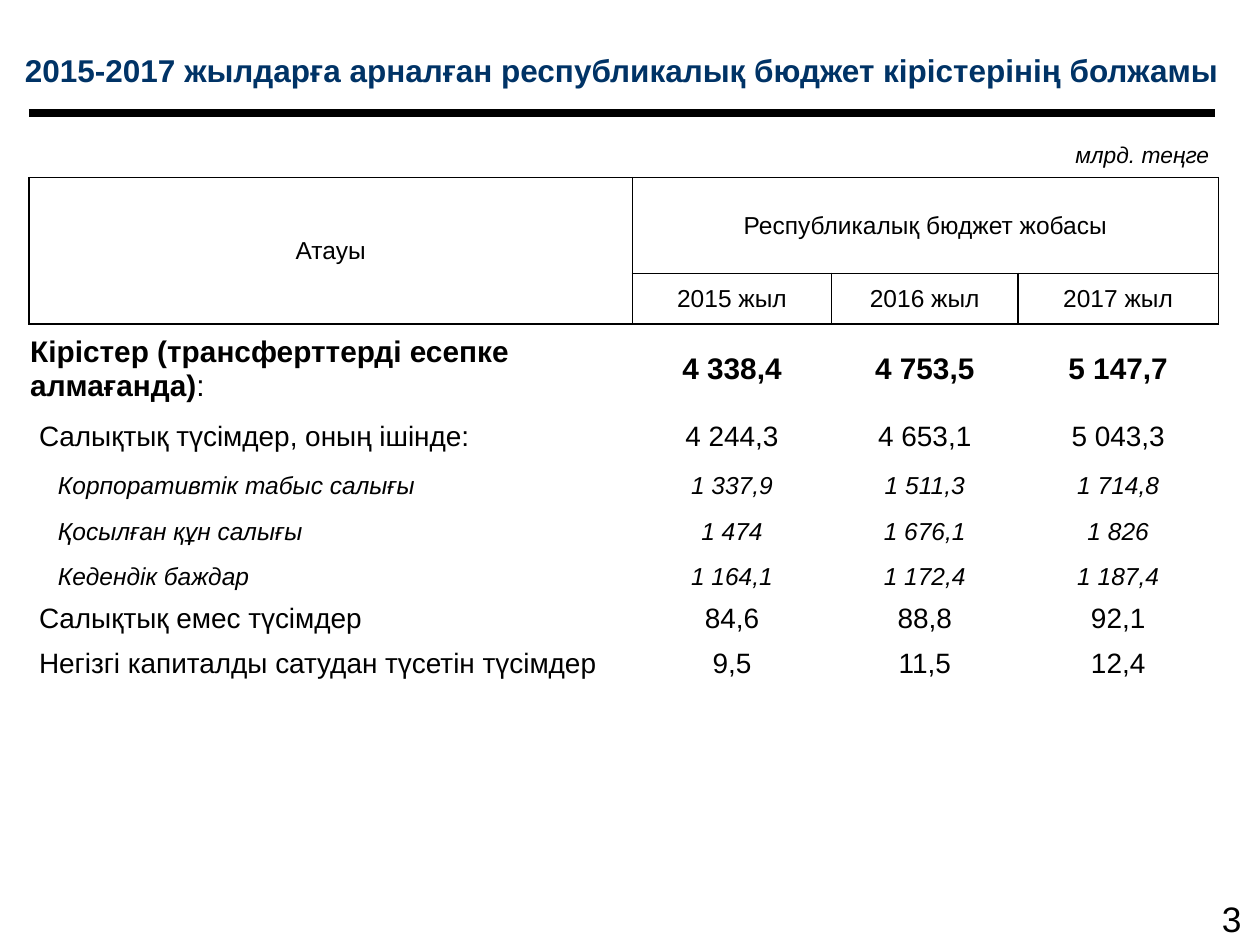
from dataclasses import dataclass

from lxml import etree
from pptx import Presentation
from pptx.dml.color import RGBColor
from pptx.enum import shapes, text
from pptx.oxml import ns
from pptx.util import Inches, Pt

COLORS = {"title": "003366", "ink": "000000"}
FONT = "Arial"
CENTER, LEFT = text.PP_ALIGN.CENTER, text.PP_ALIGN.LEFT
COL_WIDTHS = (4.79, 1.58, 1.48, 1.59)
HEADER_HEIGHTS = (0.76, 0.4)
YEARS = ("2015 жыл", "2016 жыл", "2017 жыл")


@dataclass
class Level:
    size: float
    indent: float
    bold: bool = False
    italic: bool = False


@dataclass
class BudgetRow:
    label: str
    values: tuple[str, str, str]
    height: float
    level: Level
    suffix: str = ""


HEADER = Level(14, 0.01)
TOTAL = Level(17, 0.01, bold=True)
GROUP = Level(16, 0.08)
DETAIL = Level(14, 0.23, italic=True)

ROWS = (
    BudgetRow("Кірістер (трансферттерді есепке алмағанда)",
              ("4 338,4", "4 753,5", "5 147,7"), 0.71, TOTAL, ":"),
    BudgetRow("Салықтық түсімдер, оның ішінде:",
              ("4 244,3", "4 653,1", "5 043,3"), 0.37, GROUP),
    BudgetRow("Корпоративтік табыс салығы",
              ("1 337,9", "1 511,3", "1 714,8"), 0.41, DETAIL),
    BudgetRow("Қосылған құн салығы", ("1 474", "1 676,1", "1 826"), 0.32, DETAIL),
    BudgetRow("Кедендік баждар", ("1 164,1", "1 172,4", "1 187,4"), 0.39, DETAIL),
    BudgetRow("Салықтық емес түсімдер", ("84,6", "88,8", "92,1"), 0.28, GROUP),
    BudgetRow("Негізгі капиталды сатудан түсетін түсімдер",
              ("9,5", "11,5", "12,4"), 0.43, GROUP),
)


def add_text(tf, content: str, *, size: float, color: str = "ink",
             bold: bool = False, italic: bool = False, align=LEFT) -> None:
    """Append a formatted run to the first paragraph of a text frame."""
    p = tf.paragraphs[0]
    p.alignment = align
    r = p.add_run()
    r.text = content
    r.font.name = FONT
    r.font.size = Pt(size)
    r.font.bold = bold
    r.font.italic = italic
    r.font.color.rgb = RGBColor.from_string(COLORS[color])


def add_box(s, content: str, left: float, top: float, width: float, height: float,
            *, anchor=text.MSO_ANCHOR.TOP, **fmt) -> None:
    sp = s.shapes.add_textbox(Inches(left), Inches(top), Inches(width), Inches(height))
    tf = sp.text_frame
    tf.word_wrap = True
    tf.vertical_anchor = anchor
    add_text(tf, content, **fmt)


def add_rule(s, left: float, right: float, y: float, weight: float) -> None:
    line = s.shapes.add_connector(shapes.MSO_CONNECTOR.STRAIGHT, Inches(left),
                                  Inches(y), Inches(right), Inches(y))
    line.line.width = Pt(weight)
    line.line.color.rgb = RGBColor.from_string(COLORS["ink"])
    etree.SubElement(line._element.spPr, ns.qn("a:effectLst"))


def set_borders(cell, sides: str) -> None:
    """Draw the named sides (any of L, R, T, B) and clear the others."""
    tc_pr = cell._tc.get_or_add_tcPr()
    for side in "LRTB":
        ln = etree.SubElement(tc_pr, ns.qn(f"a:ln{side}"), w=str(Pt(1)))
        if side in sides:
            fill = etree.SubElement(ln, ns.qn("a:solidFill"))
            etree.SubElement(fill, ns.qn("a:srgbClr"), val=COLORS["ink"])
        else:
            etree.SubElement(ln, ns.qn("a:noFill"))


def style_cell(cell, sides: str, indent: float = 0.01) -> None:
    cell.margin_left = Inches(indent)
    cell.margin_right = cell.margin_top = Inches(0.01)
    cell.margin_bottom = 0
    cell.vertical_anchor = text.MSO_ANCHOR.MIDDLE
    set_borders(cell, sides)
    cell.fill.background()


def fill_header(table) -> None:
    for row in range(len(HEADER_HEIGHTS)):
        for col in range(len(COL_WIDTHS)):
            style_cell(table.cell(row, col), "LRTB")
    table.cell(0, 0).merge(table.cell(1, 0))
    table.cell(0, 1).merge(table.cell(0, 3))
    labels = {(0, 0): "\u00a0Атауы".strip(), (0, 1): "Республикалық бюджет жобасы"}
    labels |= {(1, col): year for col, year in enumerate(YEARS, 1)}
    for (row, col), label in labels.items():
        add_text(table.cell(row, col).text_frame, label, size=HEADER.size, align=CENTER)


def fill_row(table, index: int, row: BudgetRow) -> None:
    level = row.level
    sides = "T" if index == len(HEADER_HEIGHTS) else ""
    fmt = dict(size=level.size, bold=level.bold, italic=level.italic)
    label = table.cell(index, 0)
    style_cell(label, sides, level.indent)
    add_text(label.text_frame, row.label, **fmt)
    if row.suffix:
        add_text(label.text_frame, row.suffix, size=level.size)
    for col, value in enumerate(row.values, 1):
        cell = table.cell(index, col)
        style_cell(cell, sides)
        add_text(cell.text_frame, value, align=CENTER, **fmt)


def add_budget_table(s, left: float, top: float) -> None:
    heights = HEADER_HEIGHTS + tuple(row.height for row in ROWS)
    table = s.shapes.add_table(len(heights), len(COL_WIDTHS), Inches(left), Inches(top),
                               Inches(sum(COL_WIDTHS)), Inches(sum(heights))).table
    table.first_row = table.horz_banding = False
    for column, width in zip(table.columns, COL_WIDTHS):
        column.width = Inches(width)
    for table_row, height in zip(table.rows, heights):
        table_row.height = Inches(height)
    fill_header(table)
    for index, row in enumerate(ROWS, len(HEADER_HEIGHTS)):
        fill_row(table, index, row)


def main() -> None:
    prs = Presentation()
    prs.slide_width, prs.slide_height = Inches(10), Inches(7.5)
    s = prs.slides.add_slide(prs.slide_layouts[6])
    add_box(s, "2015-2017 жылдарға арналған республикалық бюджет кірістерінің болжамы",
            -0.2, 0.21, 10.27, 0.69, anchor=text.MSO_ANCHOR.MIDDLE,
            size=18, color="title", bold=True, align=CENTER)
    add_rule(s, 0.23, 9.64, 0.9, 4.5)
    add_box(s, "3", 9.6, 7.07, 0.46, 0.45, size=20.2)
    add_box(s, "млрд. теңге", 8.31, 1.07, 1.51, 0.32, size=13, italic=True, align=CENTER)
    add_budget_table(s, 0.23, 1.41)
    prs.save("out.pptx")


if __name__ == "__main__":
    main()
